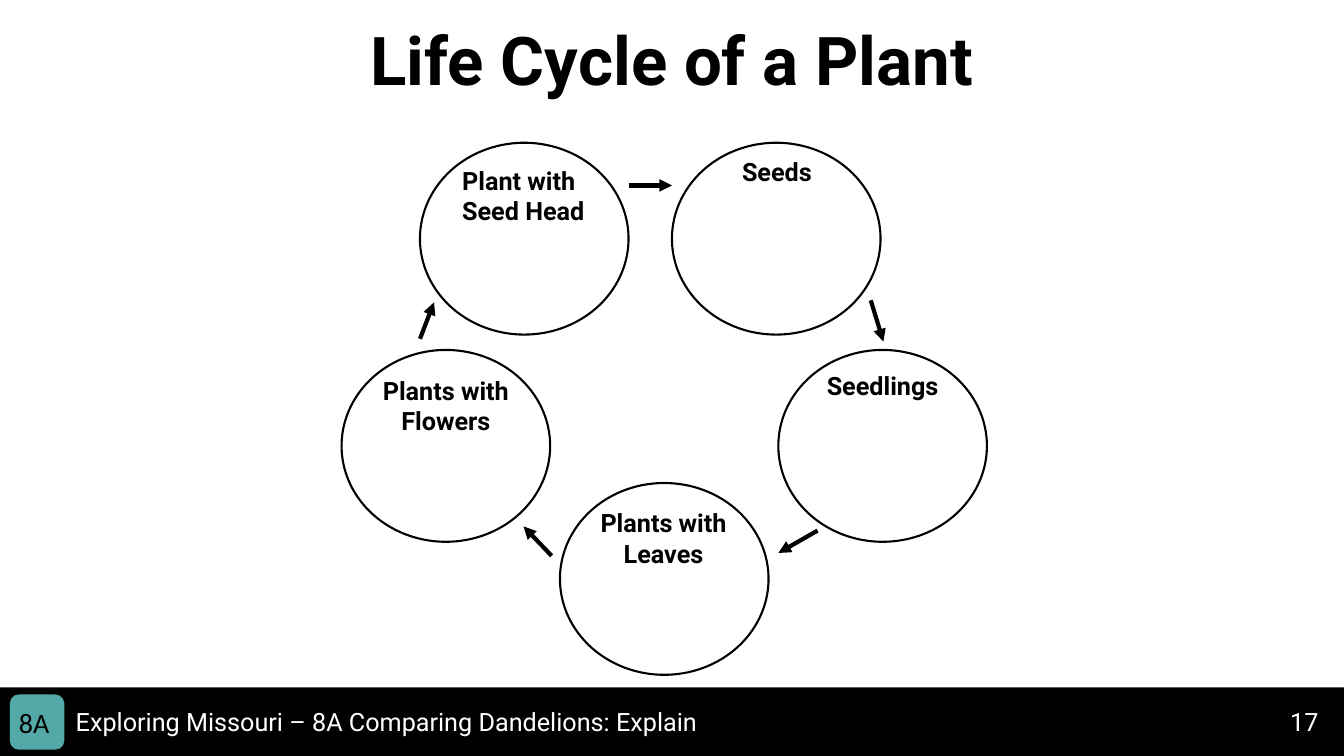
from collections import namedtuple

from lxml.etree import SubElement
from pptx import Presentation
from pptx.dml.color import RGBColor
from pptx.enum.shapes import MSO_CONNECTOR, MSO_SHAPE
from pptx.enum.text import MSO_ANCHOR, PP_ALIGN
from pptx.oxml.ns import qn
from pptx.util import Pt

Box = namedtuple("Box", "left top width height")
BLACK, WHITE, TEAL = "000000", "FFFFFF", "53A9A8"
CIRCLE_WIDTH, CIRCLE_HEIGHT = 149, 137
STAGES = [
    ("Seeds", (236, 0), Box(40, 6, 70, 29), PP_ALIGN.CENTER),
    ("Seedlings", (312, 148), Box(18, 11, 113, 29), PP_ALIGN.CENTER),
    ("Plants with Leaves", (156, 243), Box(17, 14, 114, 51), PP_ALIGN.CENTER),
    ("Plants with Flowers", (0, 148), Box(11.5, 14.5, 126, 51), PP_ALIGN.CENTER),
    ("Plant with Seed Head", (56, 0), Box(23, 12.5, 126, 51), PP_ALIGN.LEFT),
]
ARROWS = [
    ((205, 30.5), (236, 30.5)),
    ((378, 112.5), (387, 142)),
    ((340, 277), (312, 293)),
    ((150, 295), (130, 274)),
    ((56, 140), (66, 114)),
]


def color(hex_text):
    """Return the colour for a hex string."""
    return RGBColor.from_string(hex_text)


def inside(outer, inner):
    """Shift a box by the corner of the box that holds it."""
    return inner._replace(left=outer.left + inner.left, top=outer.top + inner.top)


def place(shape, box):
    """Move and size a shape to a box in points."""
    shape.left, shape.top, shape.width, shape.height = map(Pt, box)


def write(shape, text, size, ink, font="Roboto", bold=False, align=PP_ALIGN.LEFT):
    """Fill a shape with one formatted paragraph."""
    frame = shape.text_frame
    frame.text = text
    frame.word_wrap = True
    frame.vertical_anchor = MSO_ANCHOR.TOP
    para = frame.paragraphs[0]
    para.alignment = align
    for span in para.runs:
        span.font.name = font
        span.font.size = Pt(size)
        span.font.bold = bold
        span.font.color.rgb = color(ink)


def add_label(page, box, text, size, ink, **style):
    """Add a text box with formatted text."""
    write(page.shapes.add_textbox(*map(Pt, box)), text, size, ink, **style)


def add_figure(page, kind, box, fill=None):
    """Add a filled shape, or an outlined one when no fill is given."""
    shape = page.shapes.add_shape(kind, *map(Pt, box))
    shape.shadow.inherit = False
    if fill:
        shape.fill.solid()
        shape.fill.fore_color.rgb = color(fill)
        shape.line.fill.background()
    else:
        shape.fill.background()
        shape.line.color.rgb = color(BLACK)
        shape.line.width = Pt(1.5)


def add_arrow(page, start, end):
    """Add a thick black arrow between two points."""
    arrow = page.shapes.add_connector(MSO_CONNECTOR.STRAIGHT, *map(Pt, start + end))
    arrow.line.color.rgb = color(BLACK)
    arrow.line.width = Pt(3)
    SubElement(arrow.line._get_or_add_ln(), qn("a:tailEnd"), type="triangle")
    SubElement(arrow._element.spPr, qn("a:effectLst"))


def add_title(page, box):
    """Place the slide title."""
    title = page.shapes.title
    place(title, box)
    write(title, "Life Cycle of a Plant", 48, BLACK, bold=True, align=PP_ALIGN.CENTER)


def add_footer(page, box):
    """Draw the footer band with its badge, lesson name and page number."""
    add_figure(page, MSO_SHAPE.RECTANGLE, box, BLACK)
    add_label(page, inside(box, Box(914.5, 10, 39, 29)), "17", 18, WHITE)
    lesson = "Exploring Missouri – 8A Comparing Dandelions: Explain"
    add_label(page, inside(box, Box(47, 10, 564, 29)), lesson, 18, WHITE)
    add_figure(page, MSO_SHAPE.ROUNDED_RECTANGLE, inside(box, Box(7, 5, 39, 39.5)), TEAL)
    add_label(page, inside(box, Box(6.5, 9.5, 45, 31.5)), "8A", 20, BLACK, font="Calibri")


def add_cycle(page, box):
    """Draw the ring of life stages and the arrows between them."""
    for name, corner, label, align in STAGES:
        circle = inside(box, Box(*corner, CIRCLE_WIDTH, CIRCLE_HEIGHT))
        add_figure(page, MSO_SHAPE.OVAL, circle)
        add_label(page, inside(circle, label), name, 18, BLACK, bold=True, align=align)
    for ends in ARROWS:
        start, end = [(box.left + across, box.top + down) for across, down in ends]
        add_arrow(page, start, end)


def main():
    """Build and save the slide."""
    deck = Presentation()
    deck.slide_width, deck.slide_height = Pt(960), Pt(540)
    page = deck.slides.add_slide(deck.slide_layouts[5])
    add_footer(page, Box(0, 491, 960, 49))
    add_title(page, Box(204.5, 9.5, 551, 65.5))
    add_cycle(page, Box(244, 102, 461, 380))
    deck.save("out.pptx")


if __name__ == "__main__":
    main()
